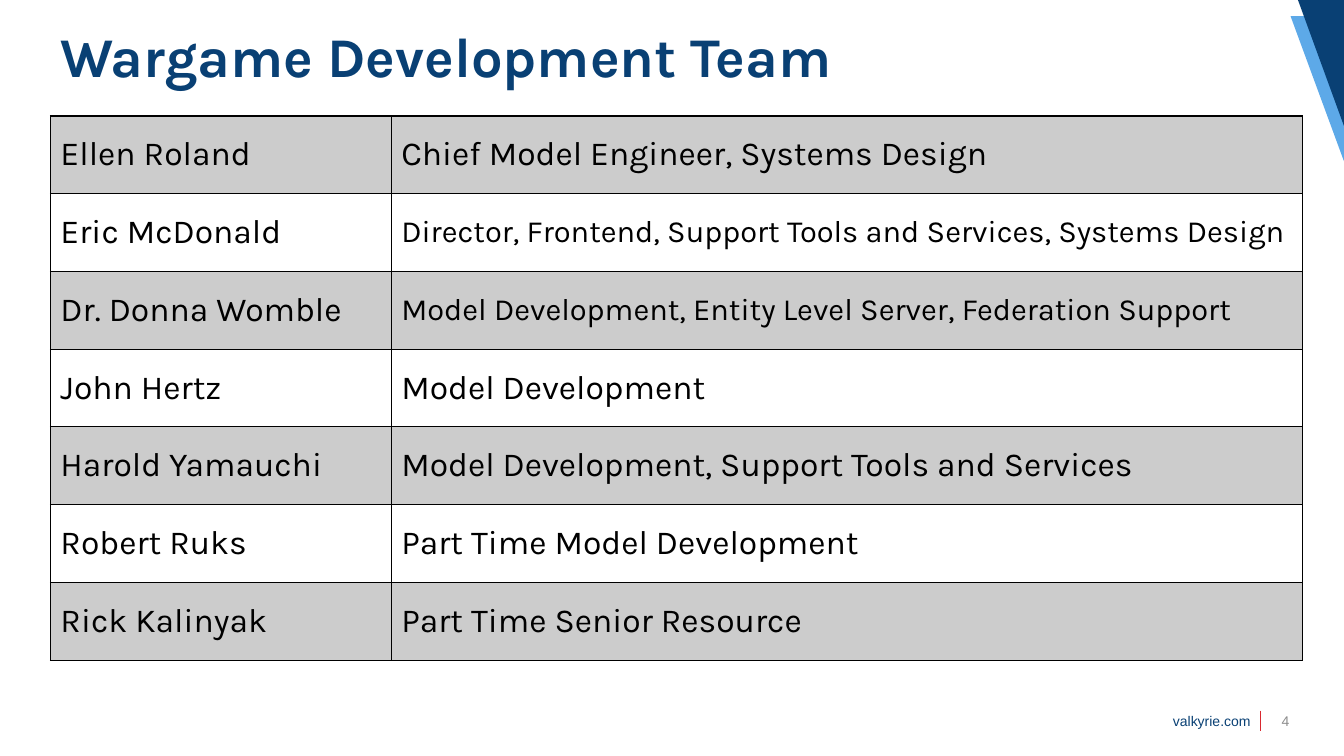
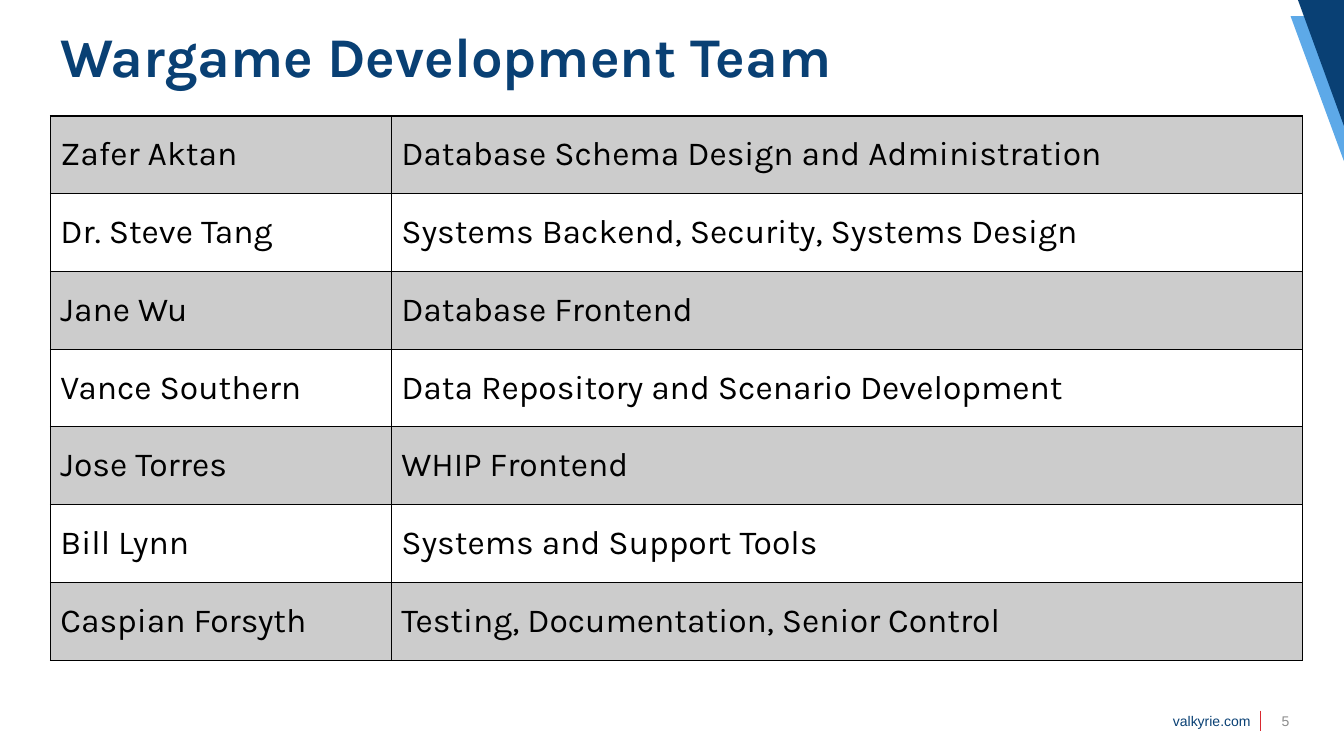
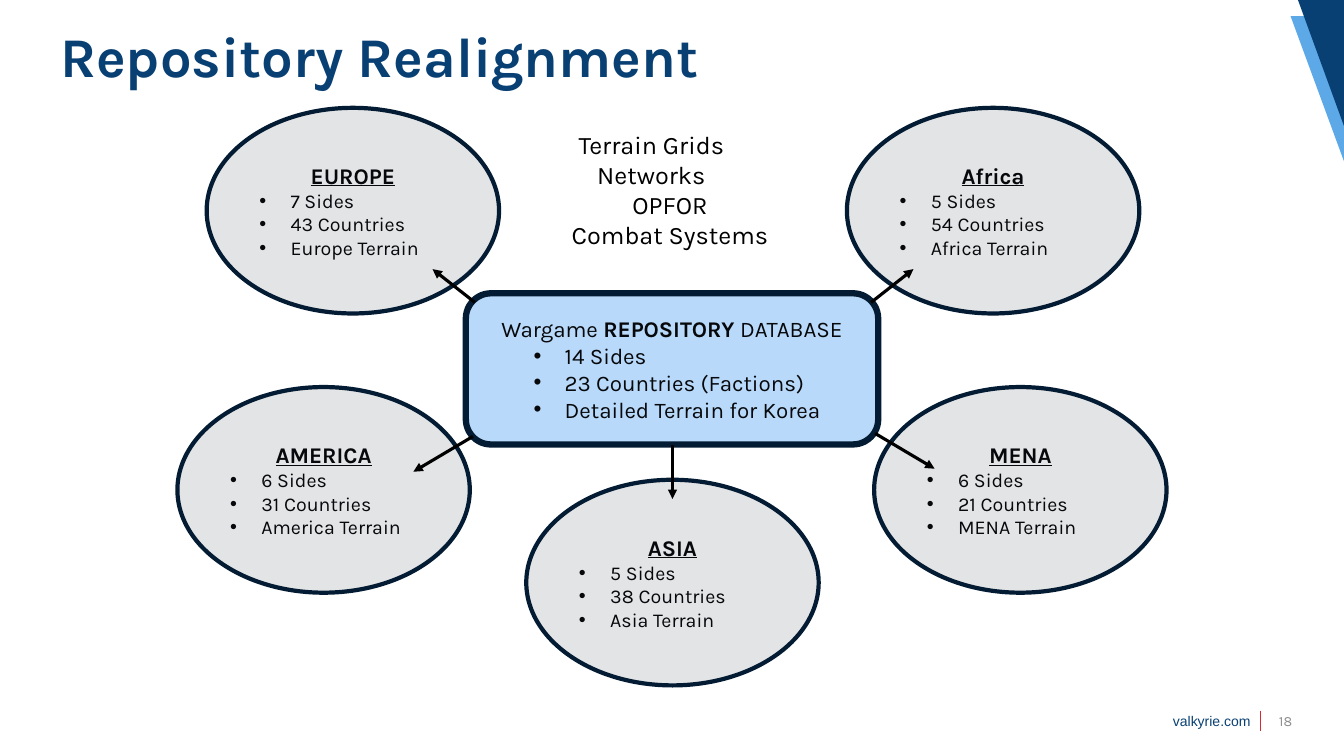
from pptx import Presentation
from pptx.dml.color import RGBColor
from pptx.enum.shapes import MSO_CONNECTOR as Link, MSO_SHAPE as Form
from pptx.enum.text import MSO_ANCHOR as Anchor, PP_ALIGN as Align
from pptx.oxml.ns import qn
from pptx.util import Inches, Pt
from lxml.etree import SubElement as Sub

NAVY, SKY, RED, GREY = "094074", "5DA9E8", "D9282F", "8C8C8C"
BLACK, BAND, INK = "000000", "CCCCCC", "07080B"
EDGE, PALE, BLUE = "041C33", "E3E4E6", "B8D9F9"

TEAM = "Wargame Development Team"
LEADS = [
    ("Ellen Roland", "Chief Model Engineer, Systems Design", 24),
    ("Eric McDonald", "Director, Frontend, Support Tools and Services, Systems Design", 22),
    ("Dr. Donna Womble", "Model Development, Entity Level Server, Federation Support", 22),
    ("John Hertz", "Model Development", 24),
    ("Harold Yamauchi", "Model Development, Support Tools and Services", 24),
    ("Robert Ruks", "Part Time Model Development", 24),
    ("Rick Kalinyak", "Part Time Senior Resource", 24),
]
STAFF = [
    ("Zafer Aktan", "Database Schema Design and Administration", 24),
    ("Dr. Steve Tang", "Systems Backend, Security, Systems Design", 24),
    ("Jane Wu", "Database Frontend", 24),
    ("Vance Southern", "Data Repository and Scenario Development", 24),
    ("Jose Torres", "WHIP Frontend", 24),
    ("Bill Lynn", "Systems and Support Tools", 24),
    ("Caspian Forsyth", "Testing, Documentation, Senior Control", 24),
]
ZONES = [
    ("AMERICA", 1.76, 3.84, ["6 Sides", "31 Countries", "America Terrain"]),
    ("EUROPE", 2.05, 1.07, ["7 Sides", "43 Countries", "Europe Terrain"]),
    ("Africa", 8.4, 1.07, ["5 Sides", "54 Countries", "Africa Terrain"]),
    ("MENA", 8.67, 3.84, ["6 Sides", "21 Countries", "MENA Terrain"]),
    ("ASIA", 5.22, 4.76, ["5 Sides", "38 Countries", "Asia Terrain"]),
]
CORE = [("Wargame ", False), ("REPOSITORY", True), (" DATABASE", False)]
FACTS = ["14 Sides", "23 Countries (Factions)", "Detailed Terrain for Korea"]
SHARED = [("Terrain Grids", 0.43), ("Networks", 0), ("OPFOR", 0.06), ("Combat Systems", 0)]
ARROWS = [
    (4.71, 3, 4.29, 2.67),
    (8.64, 3, 9.06, 2.67),
    (4.69, 4.33, 4.1, 4.68),
    (8.68, 4.3, 9.27, 4.65),
    (6.67, 4.41, 6.67, 4.95),
]
WEDGES = [
    (SKY, [(13.33, 0.16), (12.8, 0.16), (13.33, 1.6)]),
    (NAVY, [(13.33, -0.01), (12.87, -0.01), (13.33, 1.25)]),
]


def rgb(code):
    return RGBColor.from_string(code)


def write(frame, text, size=24, color=BLACK, font="Karla", bold=False,
          under=False, align=Align.LEFT, left=0, right=0, space=None):
    para = frame.add_paragraph() if frame.text else frame.paragraphs[0]
    para.alignment = align
    if space:
        para.line_spacing = space
    props = para._p.get_or_add_pPr()
    if right:
        props.set("marR", str(Inches(right)))
    if left:
        props.set("marL", str(Inches(left)))
        props.set("indent", str(Inches(-0.31)))
        Sub(props, qn("a:buFont"), typeface="Arial")
        Sub(props, qn("a:buChar"), char="•")
    for part, heavy in [(text, bold)] if isinstance(text, str) else text:
        run = para.add_run()
        run.text = part
        run.font.name, run.font.size = font, Pt(size)
        run.font.bold, run.font.underline = heavy, under
        run.font.color.rgb = rgb(color)


def box(slide, *area, anchor=Anchor.MIDDLE):
    frame = slide.shapes.add_textbox(*map(Inches, area)).text_frame
    frame.word_wrap = True
    frame.vertical_anchor = anchor
    return frame


def node(slide, form, area, fill, width):
    shape = slide.shapes.add_shape(form, *map(Inches, area))
    shape.shadow.inherit = False
    shape.fill.solid()
    shape.fill.fore_color.rgb = rgb(fill)
    shape.line.color.rgb = rgb(EDGE)
    shape.line.width = Pt(width)
    shape.text_frame.vertical_anchor = Anchor.MIDDLE
    return shape.text_frame


def rule(slide, ends, color, width, head=False):
    link = slide.shapes.add_connector(Link.STRAIGHT, *map(Inches, ends))
    link.line.color.rgb = rgb(color)
    link.line.width = Pt(width)
    if head:
        Sub(link.line._get_or_add_ln(), qn("a:tailEnd"), type="triangle")
    Sub(link._element.spPr, qn("a:effectLst"))


def start(deck, title, number, font="Arial"):
    slide = deck.slides.add_slide(deck.slide_layouts[6])
    for color, points in WEDGES:
        first, *rest = [tuple(map(Inches, point)) for point in points]
        path = slide.shapes.build_freeform(*first)
        path.add_line_segments(rest, close=True)
        wedge = path.convert_to_shape()
        wedge.shadow.inherit = False
        wedge.fill.solid()
        wedge.fill.fore_color.rgb = rgb(color)
        wedge.line.fill.background()
    write(box(slide, 11.31, 7.02, 1.19, 0.27), "valkyrie.com", size=10,
          color=NAVY, font="Arial", align=Align.RIGHT)
    rule(slide, (12.5, 7.05, 12.5, 7.25), RED, 1)
    write(box(slide, 0.5, 0.13, 11.5, 0.92), title, size=40, color=NAVY,
          bold=True, space=0.9)
    write(box(slide, 12.5, 6.95, 0.5, 0.4), number, size=10, color=GREY,
          font=font, align=Align.CENTER)
    return slide


def frame_cell(cell):
    props = cell._tc.get_or_add_tcPr()
    for index, side in enumerate(("a:lnL", "a:lnR", "a:lnT", "a:lnB")):
        line = props.makeelement(qn(side), {"w": str(Pt(1))})
        Sub(Sub(line, qn("a:solidFill")), qn("a:srgbClr"), val=BLACK)
        props.insert(index, line)


def roster(slide, people):
    area = map(Inches, (0.5, 1.15, 12.42, 5.4))
    table = slide.shapes.add_table(len(people), 2, *area).table
    table.first_row = table.horz_banding = False
    for column, width in zip(table.columns, (3.38, 9.04)):
        column.width = Inches(width)
    for row, (name, role, size) in enumerate(people):
        for col, (text, points) in enumerate([(name, 24), (role, size)]):
            cell = table.cell(row, col)
            cell.vertical_anchor = Anchor.MIDDLE
            if row % 2:
                cell.fill.background()
            else:
                cell.fill.solid()
                cell.fill.fore_color.rgb = rgb(BAND)
            frame_cell(cell)
            write(cell.text_frame, text, size=points)


def hub(slide):
    for name, left, top, facts in ZONES:
        frame = node(slide, Form.OVAL, (left, top, 2.9, 2.04), PALE, 3)
        write(frame, name, size=16, color=INK, bold=True, under=True, align=Align.CENTER)
        for fact in facts:
            write(frame, fact, size=14, color=INK, left=0.31)
    frame = node(slide, Form.ROUNDED_RECTANGLE, (4.62, 2.91, 4.09, 1.5), BLUE, 4.5)
    write(frame, CORE, size=16, color=INK, align=Align.CENTER)
    for fact in FACTS:
        write(frame, fact, size=16, color=INK, left=0.81)
    frame = box(slide, 5.53, 1.23, 2.29, 1.31, anchor=Anchor.TOP)
    for text, right in SHARED:
        write(frame, text, size=18, align=Align.CENTER, right=right)
    for ends in ARROWS:
        rule(slide, ends, BLACK, 2.25, head=True)


def main():
    deck = Presentation()
    deck.slide_width, deck.slide_height = Inches(13.33), Inches(7.5)
    for number, people in (("4", LEADS), ("5", STAFF)):
        roster(start(deck, TEAM, number), people)
    hub(start(deck, "Repository Realignment", "18", font="Karla"))
    deck.save("out.pptx")


if __name__ == "__main__":
    main()
